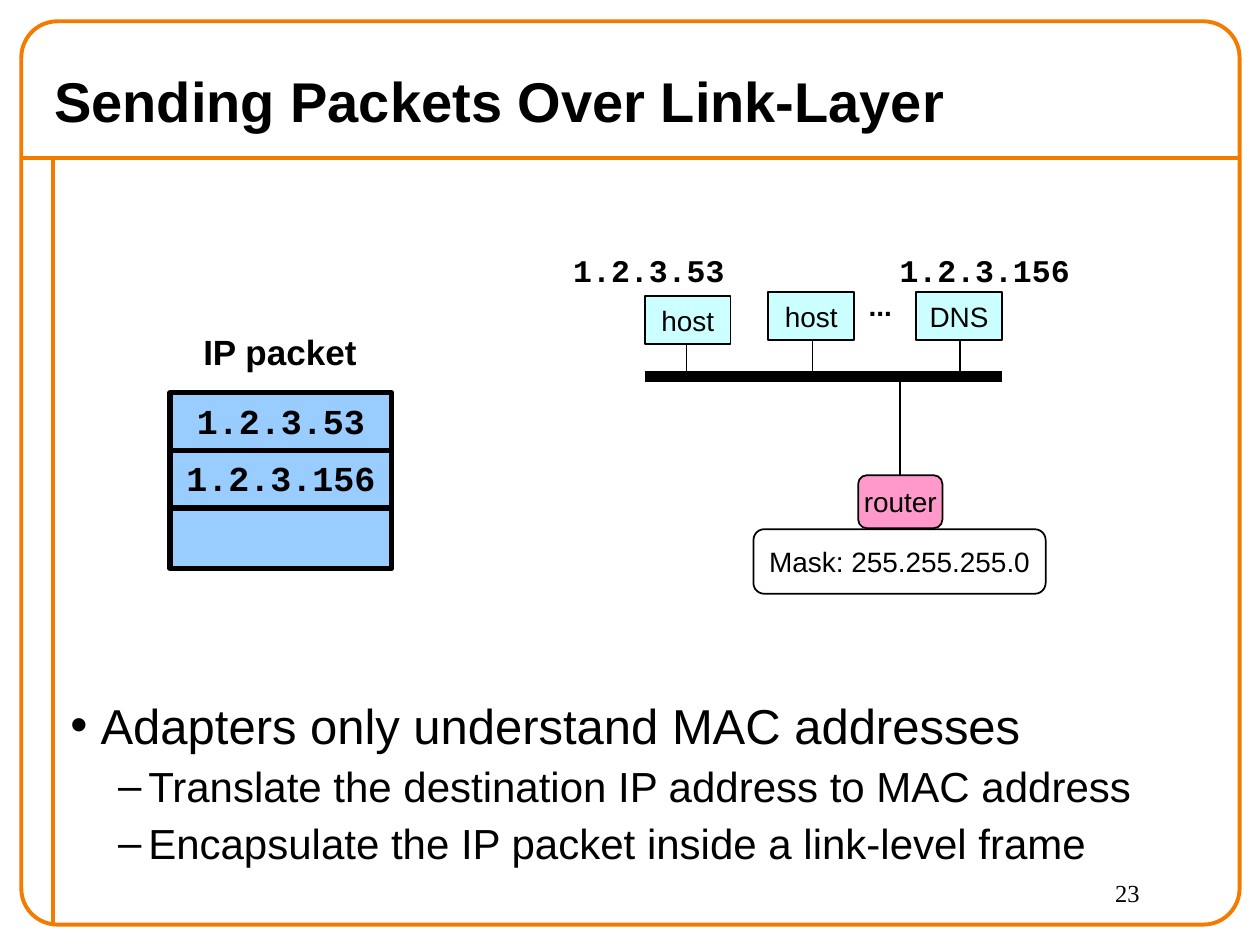
from lxml import etree
from pptx import Presentation
from pptx.dml.color import RGBColor
from pptx.enum.shapes import MSO_CONNECTOR, MSO_SHAPE
from pptx.enum.text import MSO_ANCHOR, PP_ALIGN
from pptx.oxml.ns import qn
from pptx.util import Cm, Pt

LEFT, CENTER = PP_ALIGN.LEFT, PP_ALIGN.CENTER
TOP, MIDDLE = MSO_ANCHOR.TOP, MSO_ANCHOR.MIDDLE
RECT, ROUND = MSO_SHAPE.RECTANGLE, MSO_SHAPE.ROUNDED_RECTANGLE
STRAIGHT = MSO_CONNECTOR.STRAIGHT
SANS, MONO, SERIF = "Arial", "Courier New", "Times New Roman"
COLORS = {"ink": "000000", "frame": "F47A00", "host": "CCFFFF",
          "router": "FF99CC", "packet": "99CCFF"}
HUES = {name: RGBColor.from_string(code) for name, code in COLORS.items()}

deck = Presentation()
deck.slide_width, deck.slide_height = Cm(25.4), Cm(19.05)
slide = deck.slides.add_slide(deck.slide_layouts[5])
shapes = slide.shapes


def add_line(x1, y1, x2, y2, width=1, color="ink"):
    line = shapes.add_connector(STRAIGHT, Cm(x1), Cm(y1), Cm(x2), Cm(y2))
    line.line.color.rgb = HUES[color]
    line.line.width = Pt(width)
    etree.SubElement(line._element.spPr, qn("a:effectLst"))


def add_box(kind, place, text="", size=16, font=SANS, bold=False, fill=None,
            width=1, edge="ink", align=CENTER, anchor=MIDDLE, wrap=False):
    place = [Cm(n) for n in place]
    if kind is None:
        box = shapes.add_textbox(*place)
    else:
        box = shapes.add_shape(kind, *place)
        box.shadow.inherit = False
        box.line.color.rgb = HUES[edge]
        box.line.width = Pt(width)
        if fill:
            box.fill.solid()
            box.fill.fore_color.rgb = HUES[fill]
        else:
            box.fill.background()
    frame = box.text_frame
    frame.word_wrap = wrap
    frame.vertical_anchor = anchor
    frame.text = text
    for para in frame.paragraphs:
        para.alignment = align
        for run in para.runs:
            run.font.name, run.font.size, run.font.bold = font, Pt(size), bold
            run.font.color.rgb = HUES["ink"]
    return box


add_line(0.43, 3.18, 24.97, 3.18, 2.25, "frame")
add_line(1.07, 3.18, 1.07, 18.62, 2.25, "frame")
border = add_box(ROUND, (0.43, 0.43, 24.56, 18.21), width=2.25, edge="frame")
border.adjustments[0] = 0.04
add_box(None, (22.23, 17.58, 2.54, 1.07), "23", 14, SERIF,
        align=LEFT, anchor=TOP, wrap=True)

title = shapes.title
title.left, title.top, title.width, title.height = Cm(0.84), Cm(1.07), Cm(23.93), Cm(1.9)
title.text_frame.text = "Sending Packets Over Link-Layer"
title.text_frame.vertical_anchor = MIDDLE
para = title.text_frame.paragraphs[0]
para.alignment = LEFT
font = para.runs[0].font
font.name, font.size, font.bold = SANS, Pt(32), True
font.color.rgb = HUES["ink"]

points = [
    ("Adapters only understand MAC addresses", 0),
    ("Translate the destination IP address to MAC address", 1),
    ("Encapsulate the IP packet inside a link-level frame", 1),
]
styles = [("•", 28, 0, 0.61), ("–", 24, 3.8, 1.57)]
body = add_box(None, (1.17, 13.89, 23.5, 4.06), "\n".join(text for text, level in points),
               align=LEFT, anchor=TOP, wrap=True)
for para, (text, level) in zip(body.text_frame.paragraphs, points):
    mark, size, gap, indent = styles[level]
    para.level = level
    para.space_before = Pt(gap)
    para.runs[0].font.size = Pt(size)
    props = para._p.get_or_add_pPr()
    props.set("marL", str(Cm(indent)))
    props.set("indent", str(-Cm(0.61)))
    etree.SubElement(props, qn("a:buFont"), typeface=SANS)
    etree.SubElement(props, qn("a:buChar"), char=mark)

add_line(13, 7.59, 20.19, 7.59, 6)
for tap, left, top, name in [(13.84, 13, 5.97, "host"), (16.38, 15.49, 5.89, "host"),
                             (19.35, 18.47, 5.89, "DNS")]:
    add_line(tap, 6.76, tap, 7.59)
    add_box(RECT, (left, top, 1.73, 0.97), name, fill="host")
add_box(None, (17.25, 5.69, 0.99, 0.94), "...", bold=True)
add_line(18.14, 7.49, 18.14, 9.58)
add_box(ROUND, (17.3, 9.58, 1.7, 1.07), "router", fill="router")
add_box(ROUND, (15.19, 10.67, 5.89, 1.3), "Mask: 255.255.255.0")

source, target = "1.2.3.53", "1.2.3.156"
for text, left, width in [(source, 11.3, 3.56), (target, 17.88, 3.94)]:
    add_box(None, (left, 4.93, width, 1.02), text, 18, MONO, True, anchor=TOP)

add_box(None, (3.84, 6.53, 3.61, 1.09), "IP packet", 20, bold=True, anchor=TOP)
for row, text in enumerate([source, target, ""]):
    add_box(RECT, (3.43, 7.92 + 1.16 * row, 4.47, 1.22), text, 20, MONO, True,
            fill="packet", width=3, anchor=TOP, wrap=True)

deck.save("out.pptx")
